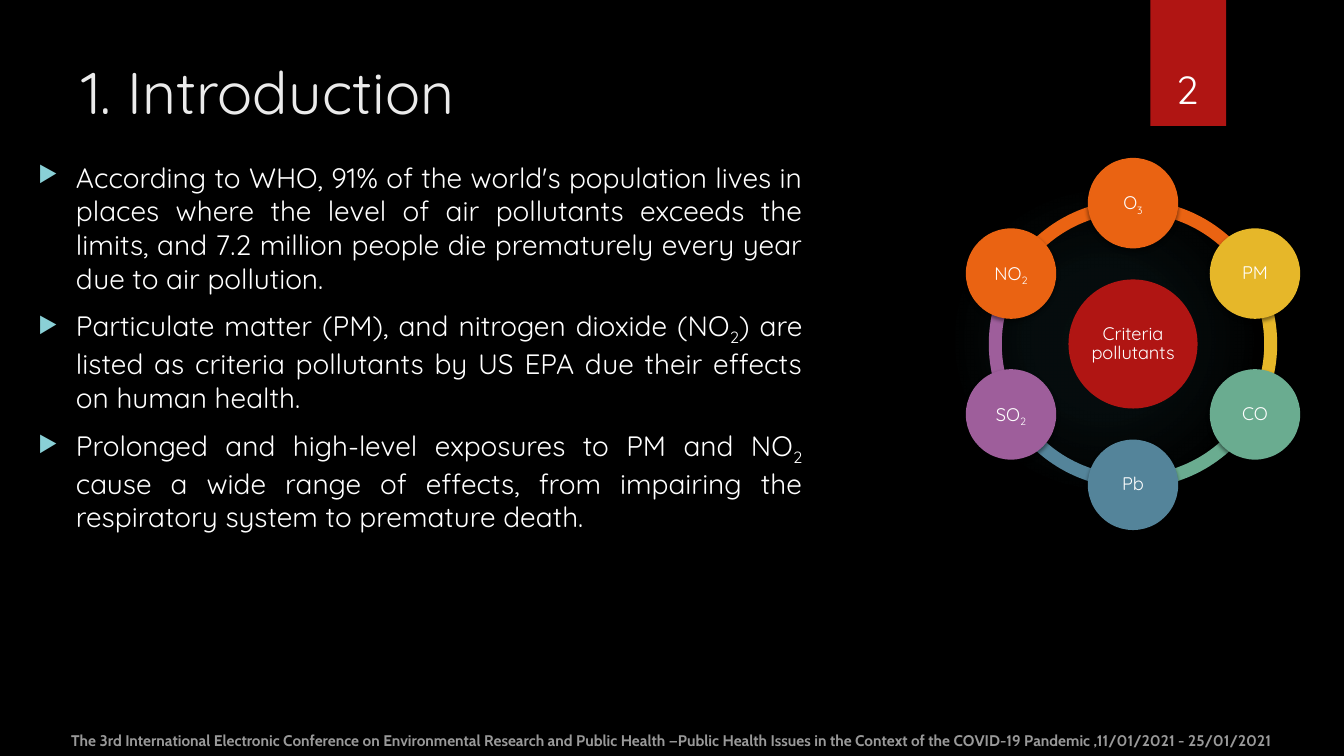
"""Builds the introduction slide about criteria air pollutants."""
from math import cos, radians, sin

from lxml import etree
from pptx import Presentation
from pptx.dml.color import RGBColor
from pptx.enum.shapes import MSO_SHAPE
from pptx.enum.text import MSO_ANCHOR, PP_ALIGN
from pptx.oxml import parse_xml
from pptx.oxml.ns import qn
from pptx.util import Pt

OVAL, ARC, RECTANGLE = MSO_SHAPE.OVAL, MSO_SHAPE.BLOCK_ARC, MSO_SHAPE.RECTANGLE
TOP, MIDDLE, BOTTOM = MSO_ANCHOR.TOP, MSO_ANCHOR.MIDDLE, MSO_ANCHOR.BOTTOM
LEFT, CENTER, JUSTIFY = PP_ALIGN.LEFT, PP_ALIGN.CENTER, PP_ALIGN.JUSTIFY
NAMESPACE = 'xmlns:a="http://schemas.openxmlformats.org/drawingml/2006/main"'

COLORS = {
    "background": "000000", "white": "FFFFFF", "title": "EBEBEB", "footer": "999999",
    "bullet": "8AD0D6", "glow": "50B9C1", "red": "B01513", "orange": "EA6312",
    "yellow": "E6B729", "green": "6AAC90", "blue": "54849A", "purple": "9E5E9B",
}

BODY = [
    "According to WHO, 91% of the world's population lives in places where the level of air "
    "pollutants exceeds the limits, and 7.2 million people die prematurely every year due to "
    "air pollution.",
    "Particulate matter (PM), and nitrogen dioxide (NO_2_) are listed as criteria pollutants "
    "by US EPA due their effects on human health.",
    "Prolonged and high-level exposures to PM and NO_2_ cause a wide range of effects, from "
    "impairing the respiratory system to premature death.",
]
FOOTER = ("The 3rd International Electronic Conference on Environmental Research and Public "
          "Health —Public Health Issues in the Context of the COVID-19 Pandemic "
          ",11/01/2021 - 25/01/2021")
POLLUTANTS = [("O_3_", "orange"), ("PM", "yellow"), ("CO", "green"),
              ("Pb", "blue"), ("SO_2_", "purple"), ("NO_2_", "orange")]

CENTER_X, CENTER_Y = 809.3, 245.7
ORBIT, RING, NODE, HUB, GLOW = 100.6, 206, 64.6, 92.2, 222


def rgb(name):
    return RGBColor.from_string(COLORS[name])


def add_bullet(paragraph):
    properties = paragraph._p.get_or_add_pPr()
    properties.set("marL", str(Pt(27)))
    properties.set("indent", str(-Pt(27)))
    color = etree.SubElement(properties, qn("a:buClr"))
    etree.SubElement(color, qn("a:srgbClr"), val=COLORS["bullet"])
    etree.SubElement(properties, qn("a:buSzPct"), val="80000")
    etree.SubElement(properties, qn("a:buChar"), char="▶")


def write(frame, *texts, size=20, color="white", font="Quicksand", bold=False, align=LEFT,
          anchor=TOP, spacing=None, before=0, bullet=False):
    """Fill a text frame with paragraphs; text between underscores is subscript."""
    frame.word_wrap = True
    frame.vertical_anchor = anchor
    for index, text in enumerate(texts):
        paragraph = frame.add_paragraph() if index else frame.paragraphs[0]
        paragraph.alignment = align
        paragraph.line_spacing = spacing
        if index:
            paragraph.space_before = Pt(before)
        if bullet:
            add_bullet(paragraph)
        for part, piece in enumerate(text.split("_")):
            if not piece:
                continue
            run = paragraph.add_run()
            run.text = piece
            run.font.size = Pt(size)
            run.font.name = font
            run.font.bold = bold
            run.font.color.rgb = rgb(color)
            if part % 2:
                run._r.get_or_add_rPr().set("baseline", "-25000")


class SlideBuilder:
    """Holds the slide and adds styled elements to it."""

    def __init__(self, slide):
        self.slide = slide
        slide.background.fill.solid()
        slide.background.fill.fore_color.rgb = rgb("background")

    def text(self, left, top, width, height, *texts, **style):
        box = self.slide.shapes.add_textbox(Pt(left), Pt(top), Pt(width), Pt(height))
        write(box.text_frame, *texts, **style)

    def shape(self, kind, left, top, width, height, color, shadow=False):
        shape = self.slide.shapes.add_shape(kind, Pt(left), Pt(top), Pt(width), Pt(height))
        shape.shadow.inherit = False
        shape.fill.solid()
        shape.fill.fore_color.rgb = rgb(color)
        shape.line.fill.background()
        if shadow:
            effects = shape._element.spPr.find(qn("a:effectLst"))
            effects.append(parse_xml(
                f'<a:outerShdw {NAMESPACE} blurRad="{Pt(3)}" dist="{Pt(2)}" dir="5400000" '
                'rotWithShape="0"><a:srgbClr val="000000"><a:alpha val="45000"/></a:srgbClr>'
                '</a:outerShdw>'))
        return shape

    def centered(self, kind, x, y, size, color, shadow=False):
        return self.shape(kind, x - size / 2, y - size / 2, size, size, color, shadow)

    def disc(self, x, y, size, color, label, shadow=False):
        frame = self.centered(OVAL, x, y, size, color, shadow).text_frame
        frame.margin_left = frame.margin_right = Pt(1.3)
        frame.margin_top = frame.margin_bottom = Pt(1.3)
        write(frame, label, size=13, align=CENTER, anchor=MIDDLE, spacing=0.9)

    def arc(self, start, color):
        arc = self.centered(ARC, CENTER_X, CENTER_Y, RING, color)
        arc.adjustments[0] = start * 0.6
        arc.adjustments[1] = (start + 60) % 360 * 0.6
        arc.adjustments[2] = 0.045

    def glow(self, x, y, size):
        properties = self.centered(OVAL, x, y, size, "glow")._element.spPr
        stops = "".join(
            f'<a:gs pos="{position}000"><a:srgbClr val="{COLORS["glow"]}">'
            f'<a:alpha val="{alpha}000"/></a:srgbClr></a:gs>'
            for position, alpha in [(0, 7), (36, 6), (69, 0)])
        gradient = parse_xml(
            f'<a:gradFill {NAMESPACE}><a:gsLst>{stops}</a:gsLst><a:path path="circle">'
            '<a:fillToRect l="50000" t="50000" r="50000" b="50000"/></a:path></a:gradFill>')
        properties.replace(properties.find(qn("a:solidFill")), gradient)

    def pollutant_cycle(self):
        for index, (_, color) in enumerate(POLLUTANTS):
            self.arc((270 + 60 * index) % 360, color)
        self.disc(CENTER_X, CENTER_Y, HUB, "red", "Criteria pollutants")
        for index, (label, color) in enumerate(POLLUTANTS):
            angle = radians(60 * index - 90)
            self.disc(CENTER_X + ORBIT * cos(angle), CENTER_Y + ORBIT * sin(angle),
                      NODE, color, label, shadow=True)


def main():
    presentation = Presentation()
    presentation.slide_width, presentation.slide_height = Pt(960), Pt(540)
    builder = SlideBuilder(presentation.slides.add_slide(presentation.slide_layouts[6]))
    builder.glow(788.4, 242.6, GLOW)
    builder.shape(RECTANGLE, 821.8, 0, 54, 90, "red", shadow=True)
    builder.text(51, 36, 741, 110, "1. Introduction", size=42, color="title")
    builder.text(20.2, 110.9, 560, 381, *BODY, align=JUSTIFY, before=10, bullet=True)
    builder.text(815, 23, 66.2, 60.5, "2", size=28, align=CENTER, anchor=BOTTOM)
    builder.text(0, 507.6, 960, 31.7, FOOTER, size=11, color="footer", font="Cabin",
                 bold=True, align=CENTER, anchor=BOTTOM)
    builder.pollutant_cycle()
    presentation.save("out.pptx")


if __name__ == "__main__":
    main()
